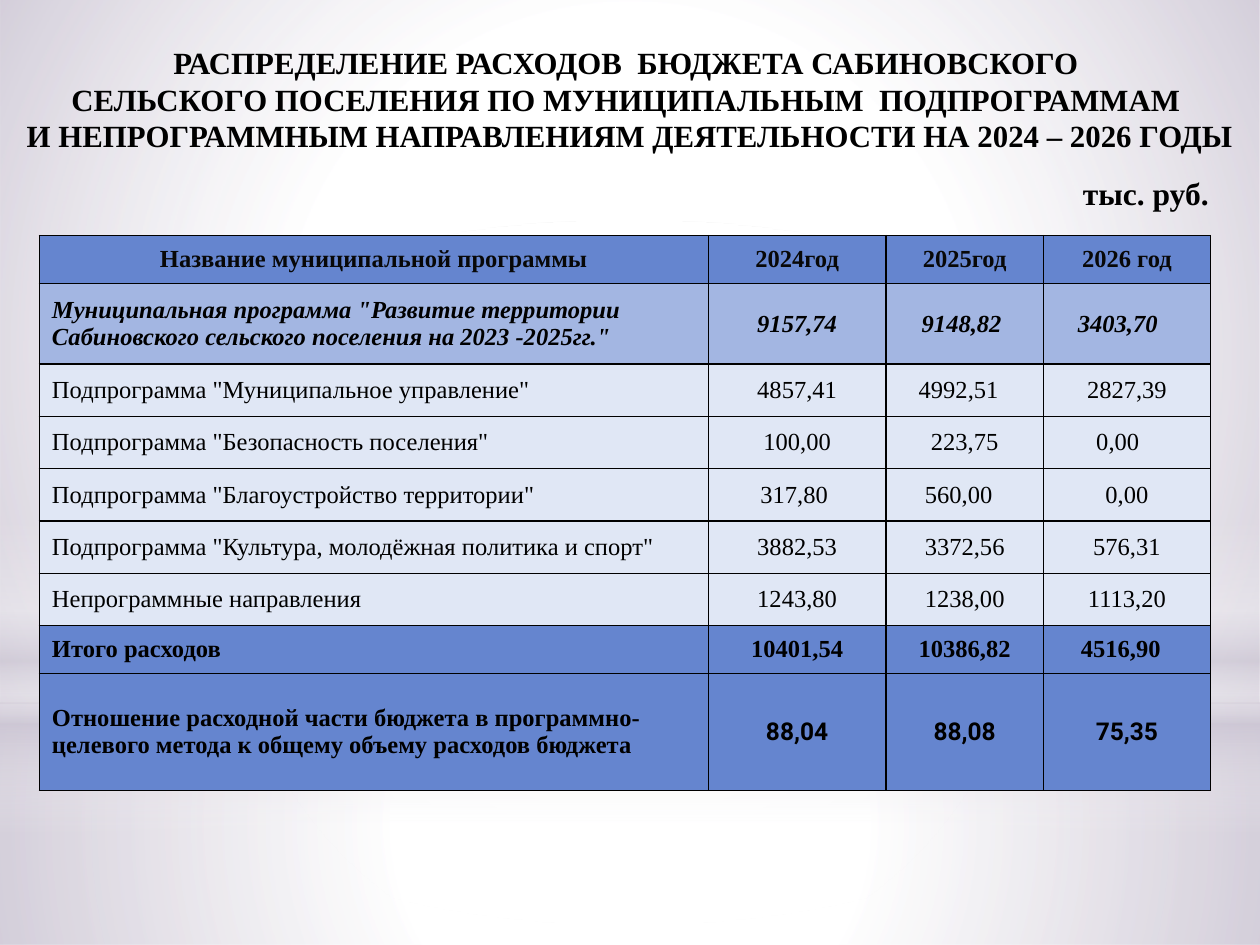
from lxml import etree
from pptx import Presentation
from pptx.dml.color import RGBColor
from pptx.enum.shapes import MSO_SHAPE
from pptx.enum.text import MSO_ANCHOR, PP_ALIGN
from pptx.oxml.ns import qn
from pptx.util import Pt

RECT, OVAL = MSO_SHAPE.RECTANGLE, MSO_SHAPE.OVAL
LEFT, MID, RIGHT = PP_ALIGN.LEFT, PP_ALIGN.CENTER, PP_ALIGN.RIGHT
BLACK = RGBColor(0, 0, 0)
INK = RGBColor(8, 8, 8)
BLUE = RGBColor(0x65, 0x85, 0xCF)
SKY = RGBColor(0xA3, 0xB6, 0xE2)
PALE = RGBColor(0xE0, 0xE7, 0xF5)
WHITE = RGBColor(255, 255, 255)
LILAC = RGBColor(0xC9, 0xC2, 0xD1)
SERIF, SANS = "Times New Roman", "Roboto"

TITLE = [
    "РАСПРЕДЕЛЕНИЕ РАСХОДОВ  БЮДЖЕТА САБИНОВСКОГО ",
    "СЕЛЬСКОГО ПОСЕЛЕНИЯ ПО МУНИЦИПАЛЬНЫМ  ПОДПРОГРАММАМ ",
    "И НЕПРОГРАММНЫМ НАПРАВЛЕНИЯМ ДЕЯТЕЛЬНОСТИ НА 2024 – 2026 ГОДЫ",
]
UNIT = "тыс. руб."

# Backdrop: shape, top, height, angle (None = circular), stops (%, colour, alpha %)
GLOWS = [
    (RECT, 401.75, 138.25, None, [(0, WHITE, 91), (37, WHITE, 76), (100, LILAC, 79)]),
    (RECT, 0, 401.75, None, [(0, WHITE, 89), (48, WHITE, 62), (100, LILAC, 79)]),
    (RECT, 296.6, 180, 90, [(0, WHITE, 0), (29, WHITE, 30), (45, LILAC, 40),
                            (55, WHITE, 26), (65, LILAC, 60), (100, WHITE, 0)]),
    (OVAL, 126, 401.75, None, [(0, WHITE, 100), (56, WHITE, 0)]),
]

# Row kinds: fill, bold, italic, height
KINDS = {
    "head": (BLUE, True, False, 27.4),
    "main": (SKY, True, True, 46),
    "sub": (PALE, False, False, 29.9),
    "sum": (BLUE, True, False, 27.4),
    "share": (BLUE, True, False, 66.9),
}
ROWS = [
    ("head", "Название муниципальной программы", "2024год", "2025год", "2026 год"),
    ("main", 'Муниципальная программа "Развитие территории Сабиновского '
             'сельского поселения на 2023 -2025гг."', "9157,74", "9148,82", "3403,70"),
    ("sub", 'Подпрограмма "Муниципальное управление"', "4857,41", "4992,51", "2827,39"),
    ("sub", 'Подпрограмма "Безопасность поселения"', "100,00", "223,75", "0,00"),
    ("sub", 'Подпрограмма "Благоустройство территории"', "317,80", "560,00", "0,00"),
    ("sub", 'Подпрограмма "Культура, молодёжная политика и спорт"',
     "3882,53", "3372,56", "576,31"),
    ("sub", "Непрограммные направления", "1243,80", "1238,00", "1113,20"),
    ("sum", "Итого расходов", "10401,54", "10386,82", "4516,90"),
    ("share", "Отношение расходной части бюджета в программно-целевого метода "
              "к общему объему расходов бюджета", "88,04", "88,08", "75,35"),
]
COLS = [382.3, 101.5, 90, 95.4]
# Extra right margin of values set left of centre: (row, column) -> points
SHIFT = {(1, 2): 3.5, (1, 3): 10.5, (2, 2): 7, (3, 3): 10.5,
         (4, 1): 3.5, (4, 2): 7, (7, 3): 7}


def add(node, tag, **attrs):
    return etree.SubElement(node, qn(tag), {k: str(v) for k, v in attrs.items()})


def add_glow(slide, kind, top, high, angle, stops):
    shape = slide.shapes.add_shape(kind, 0, Pt(top), Pt(720), Pt(high))
    shape.shadow.inherit = False
    shape.line.fill.background()
    shape.fill.gradient()
    grad = shape._element.spPr.find(qn("a:gradFill"))
    for child in list(grad):
        grad.remove(child)
    items = add(grad, "a:gsLst")
    for pos, color, alpha in stops:
        stop = add(items, "a:gs", pos=pos * 1000)
        tint = add(stop, "a:srgbClr", val=color)
        add(tint, "a:alpha", val=alpha * 1000)
    if angle is None:
        way = add(grad, "a:path", path="circle")
        add(way, "a:fillToRect", l=50000, t=50000, r=50000, b=50000)
    else:
        add(grad, "a:lin", ang=angle * 60000, scaled=0)


def style(para, align, size, color, bold=True, italic=False, face=SERIF):
    para.alignment = align
    for run in para.runs:
        font = run.font
        font.name, font.size = face, Pt(size)
        font.bold, font.italic = bold, italic
        font.color.rgb = color


def add_text(slide, box, lines, align, size, anchor):
    frame = slide.shapes.add_textbox(*map(Pt, box)).text_frame
    frame.word_wrap = True
    frame.vertical_anchor = anchor
    frame.text = "\n".join(lines)
    for para in frame.paragraphs:
        style(para, align, size, BLACK)
    return frame


def set_borders(cell):
    props = cell._tc.get_or_add_tcPr()
    for spot, side in enumerate(("a:lnL", "a:lnR", "a:lnT", "a:lnB")):
        line = add(props, side, w=12700)
        add(add(line, "a:solidFill"), "a:srgbClr", val=BLACK)
        props.insert(spot, line)


def fill_cell(cell, text, row, col, kind):
    fill, bold, italic, _ = KINDS[kind]
    head = kind == "head"
    cell.fill.solid()
    cell.fill.fore_color.rgb = fill
    set_borders(cell)
    cell.vertical_anchor = MSO_ANCHOR.MIDDLE
    side = 3.6 if head else 7.2
    cell.margin_left = Pt(side)
    cell.margin_right = Pt(side + SHIFT.get((row, col), 0))
    cell.margin_top = cell.margin_bottom = Pt(3.6)
    cell.text = text
    style(cell.text_frame.paragraphs[0], MID if head or col else LEFT, 14,
          INK if head else BLACK, bold, italic,
          SANS if kind == "share" and col else SERIF)


def main():
    deck = Presentation()
    deck.slide_width, deck.slide_height = Pt(720), Pt(540)
    slide = deck.slides.add_slide(deck.slide_layouts[6])
    slide.background.fill.solid()
    slide.background.fill.fore_color.rgb = WHITE

    for glow in GLOWS:
        add_glow(slide, *glow)

    # Budget table
    highs = [KINDS[row[0]][3] for row in ROWS]
    table = slide.shapes.add_table(len(ROWS), len(COLS), Pt(22.5), Pt(134.7),
                                   Pt(sum(COLS)), Pt(sum(highs))).table
    for col, wide in enumerate(COLS):
        table.columns[col].width = Pt(wide)
    for row, (kind, *texts) in enumerate(ROWS):
        table.rows[row].height = Pt(highs[row])
        for col, text in enumerate(texts):
            fill_cell(table.cell(row, col), text, row, col, kind)

    # Unit and title
    add_text(slide, (602, 95.8, 95.8, 29), [UNIT], RIGHT, 18, MSO_ANCHOR.TOP)
    title = add_text(slide, (0, 11.5, 720, 90), TITLE, MID, 17.6, MSO_ANCHOR.MIDDLE)
    for para in title.paragraphs:
        para.line_spacing = Pt(21)

    deck.save("out.pptx")


if __name__ == "__main__":
    main()
